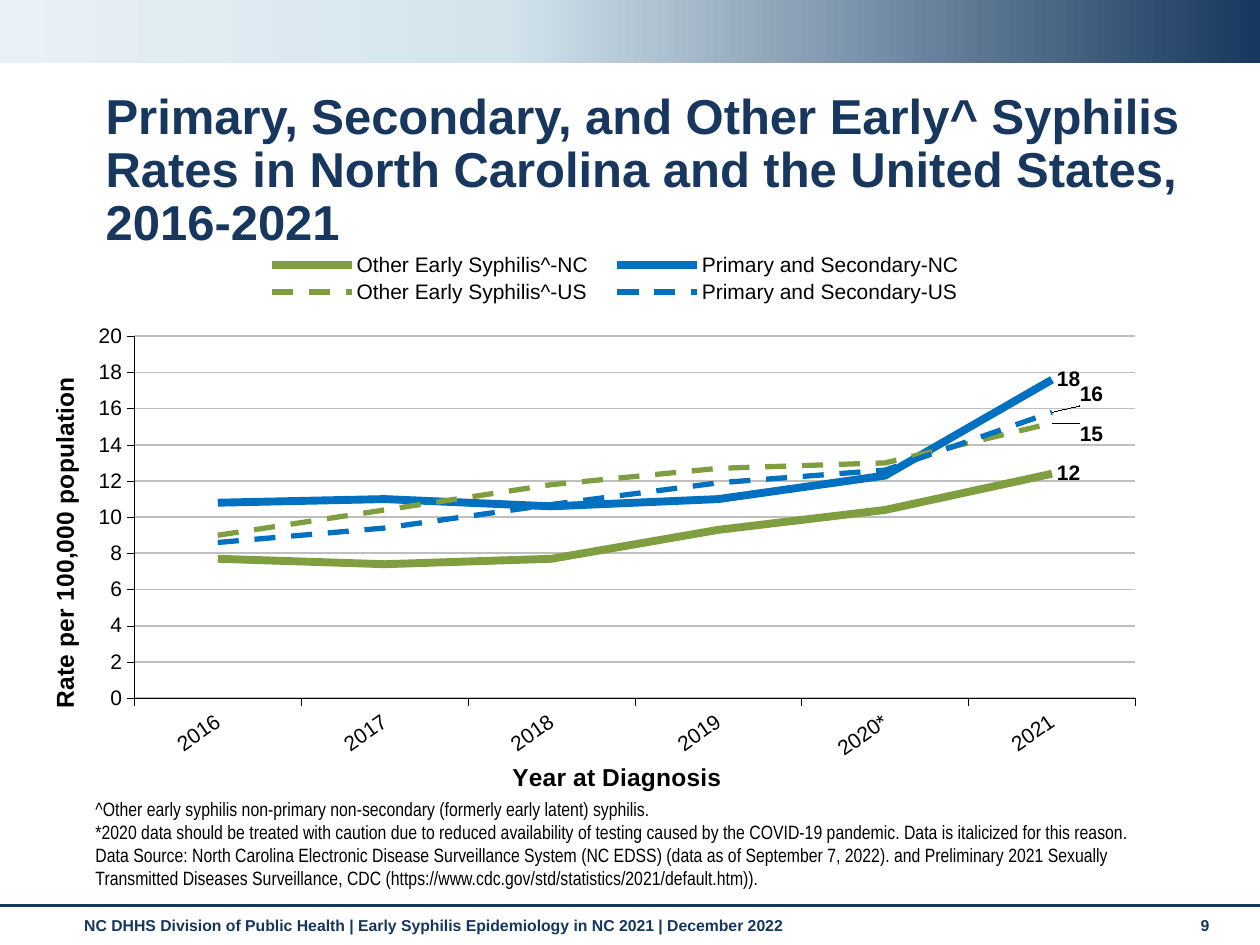
from lxml import etree
from pptx import Presentation
from pptx.chart.data import CategoryChartData
from pptx.dml.color import RGBColor
from pptx.enum.chart import XL_CHART_TYPE, XL_LABEL_POSITION, XL_LEGEND_POSITION, XL_TICK_MARK
from pptx.enum.dml import MSO_LINE
from pptx.enum.shapes import MSO_CONNECTOR, MSO_SHAPE
from pptx.enum.text import MSO_ANCHOR
from pptx.oxml import parse_xml
from pptx.oxml.ns import nsdecls, qn
from pptx.util import Inches, Pt

NAVY = RGBColor(0x17, 0x37, 0x5E)
FOOTER_NAVY = RGBColor(0x15, 0x36, 0x5E)
GREEN = RGBColor(0x7F, 0x9E, 0x3F)
BLUE = RGBColor(0x00, 0x70, 0xC0)
GRAY = RGBColor(0xBF, 0xBF, 0xBF)
BLACK = RGBColor(0, 0, 0)
BAND_STOPS = [(0, NAVY), (60, RGBColor(0xD3, 0xE4, 0xED)), (100, RGBColor(0xE9, 0xF1, 0xF6))]

YEARS = ["2016", "2017", "2018", "2019", "2020*", "2021"]
# name, rates, colour, width, dash, label shift as shares of the chart
SERIES = [
    ("Other Early Syphilis^-NC", (7.7, 7.4, 7.7, 9.3, 10.4, 12.4), GREEN, 4.5, None, None),
    ("Primary and Secondary-NC", (10.8, 11, 10.6, 11, 12.3, 17.6), BLUE, 4.5, None, None),
    ("Other Early Syphilis^-US", (9, 10.4, 11.8, 12.7, 13, 15.2), GREEN, 3, MSO_LINE.DASH, (0.02, 0.02)),
    ("Primary and Secondary-US", (8.6, 9.4, 10.7, 11.9, 12.6, 15.8), BLUE, 3, MSO_LINE.DASH, (0.02, -0.03)),
]
TITLE = ("Primary, Secondary, and Other Early^ Syphilis Rates in North Carolina "
         "and the United States, 2016-2021")
FOOTER = "NC DHHS Division of Public Health | Early Syphilis Epidemiology in NC 2021 | December 2022"
NOTES = [
    "^Other early syphilis non-primary non-secondary (formerly early latent) syphilis.",
    "*2020 data should be treated with caution due to reduced availability of testing caused by "
    "the COVID-19 pandemic. Data is italicized for this reason.",
    "Data Source: North Carolina Electronic Disease Surveillance System (NC EDSS) (data as of "
    "September 7, 2022). and Preliminary 2021 Sexually Transmitted Diseases Surveillance, CDC "
    "(https://www.cdc.gov/std/statistics/2021/default.htm)).",
]


def set_font(font, size, color=BLACK, bold=False, name="Arial"):
    for key, value in {"size": Pt(size), "bold": bold, "name": name}.items():
        setattr(font, key, value)
    font.color.rgb = color


def set_line(line, color, width):
    line.color.rgb = color
    line.width = Pt(width)


def add_text(s, box, lines, anchor=MSO_ANCHOR.TOP, spacing=None, **font):
    tf = s.shapes.add_textbox(*map(Inches, box)).text_frame
    tf.word_wrap = True
    tf.vertical_anchor = anchor
    for i, line in enumerate(lines):
        p = tf.add_paragraph() if i else tf.paragraphs[0]
        p.line_spacing = spacing
        r = p.add_run()
        r.text = line
        set_font(r.font, **font)


def add_band(s, box):
    sp = s.shapes.add_shape(MSO_SHAPE.RECTANGLE, *map(Inches, box))
    sp.shadow.inherit = False
    sp.line.fill.background()
    sp.fill.gradient()
    stops = "".join(f'<a:gs pos="{pos * 1000}"><a:srgbClr val="{color}"/></a:gs>'
                    for pos, color in BAND_STOPS)
    grad = parse_xml(f'<a:gradFill {nsdecls("a")} rotWithShape="1"><a:gsLst>{stops}</a:gsLst>'
                     '<a:lin ang="10800000" scaled="0"/></a:gradFill>')
    props = sp.element.spPr
    props.replace(props.find(qn("a:gradFill")), grad)


def add_footer(s, box):
    x, y, w, h = box
    rule = s.shapes.add_connector(MSO_CONNECTOR.STRAIGHT, *map(Inches, (x, y, x + w, y)))
    set_line(rule.line, NAVY, 1.75)
    etree.SubElement(rule.element.spPr, qn("a:effectLst"))
    for left, width, text in ((0.057, 0.874, FOOTER), (0.943, 0.044, "9")):
        add_text(s, (x + left * w, y + 0.03, width * w, h - 0.03), [text],
                 size=9, color=FOOTER_NAVY, bold=True)


def manual_layout(x, y, w=None, h=None, inner=False):
    """Layout in shares of the chart; without a size it is a shift."""
    tags = []
    if inner:
        tags.append(("layoutTarget", "inner"))
    if w:
        tags += [("xMode", "edge"), ("yMode", "edge")]
    tags += [("x", x), ("y", y)]
    if w:
        tags += [("w", w), ("h", h)]
    body = "".join(f'<c:{tag} val="{value}"/>' for tag, value in tags)
    return parse_xml(f'<c:layout {nsdecls("c")}><c:manualLayout>{body}</c:manualLayout></c:layout>')


def replace_layout(parent, layout, before=None):
    for old in parent.findall(qn("c:layout")):
        parent.remove(old)
    if before is None:
        parent.insert(0, layout)
    else:
        parent.find(qn(before)).addnext(layout)


def style_axis(axis, title):
    axis.has_title = True
    tf = axis.axis_title.text_frame
    tf.text = title
    set_font(tf.paragraphs[0].runs[0].font, 14, bold=True)
    set_font(axis.tick_labels.font, 12)
    axis.major_tick_mark = XL_TICK_MARK.OUTSIDE
    axis.minor_tick_mark = XL_TICK_MARK.NONE
    set_line(axis.format.line, BLACK, 0.25)


def label_last_point(series, shift):
    label = series.points[len(YEARS) - 1].data_label
    set_font(label.font, 12, bold=True)
    label.position = XL_LABEL_POSITION.RIGHT
    series.data_labels.show_value = False
    idx = series.data_labels._element.find(qn("c:dLbl")).find(qn("c:idx"))
    idx.addnext(parse_xml(f'<c:numFmt {nsdecls("c")} formatCode="0" sourceLinked="0"/>'))
    if shift:
        idx.addnext(manual_layout(*shift))


def add_rate_chart(s, box):
    data = CategoryChartData(number_format="0.0")
    data.categories = YEARS
    for name, rates, *_ in SERIES:
        data.add_series(name, rates)
    chart = s.shapes.add_chart(XL_CHART_TYPE.LINE, *map(Inches, box), data).chart
    set_font(chart.font, 18, bold=True, name="Cambria")
    chart.has_title = False
    chart.plots[0].vary_by_categories = False

    # Axes
    cat, val = chart.category_axis, chart.value_axis
    style_axis(cat, "Year at Diagnosis")
    style_axis(val, "Rate per 100,000 population")
    cat._element.find(qn("c:txPr")).find(qn("a:bodyPr")).set("rot", str(-35 * 60000))
    val.minimum_scale, val.maximum_scale, val.major_unit = 0, 20, 2
    val.tick_labels.number_format = "0"
    val.tick_labels.number_format_is_linked = False
    set_line(val.major_gridlines.format.line, GRAY, 1)

    # Lines and end labels
    for series, (_, _, color, width, dash, shift) in zip(chart.plots[0].series, SERIES):
        series.smooth = False
        set_line(series.format.line, color, width)
        series.format.line.dash_style = dash
        label_last_point(series, shift)

    # Legend and plot area
    chart.has_legend = True
    legend = chart.legend
    legend.position = XL_LEGEND_POSITION.TOP
    legend.include_in_layout = False
    set_font(legend.font, 12)
    replace_layout(legend._element, manual_layout(0.18, 0.06, 0.64, 0.1), "c:legendPos")
    plot_area = chart._chartSpace.chart.plotArea
    replace_layout(plot_area, manual_layout(0.079, 0.209, 0.876, 0.619, inner=True))


def main():
    prs = Presentation()
    prs.slide_width, prs.slide_height = Inches(10), Inches(7.5)
    s = prs.slides.add_slide(prs.slide_layouts[6])
    add_band(s, (0, 0, 10, 0.5))
    add_footer(s, (0, 7.19, 10, 0.31))
    add_text(s, (0.74, 0.68, 8.93, 0.6), [TITLE], spacing=0.9, size=28, color=NAVY, bold=True)
    add_rate_chart(s, (0.35, 1.7, 9.07, 4.64))
    add_text(s, (0.66, 6.57, 8.74, 0.54), NOTES, anchor=MSO_ANCHOR.BOTTOM,
             size=11, name="Arial Narrow")
    prs.save("out.pptx")


if __name__ == "__main__":
    main()
